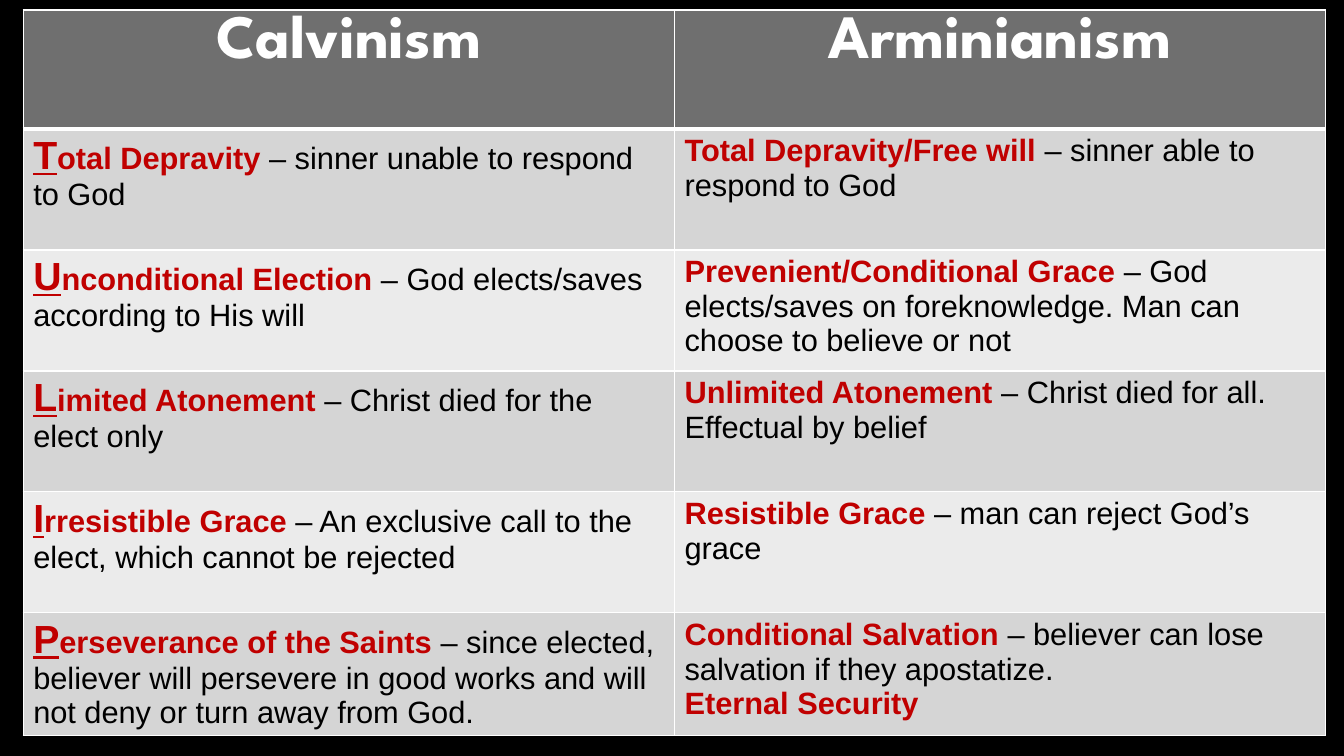
import dataclasses
import typing

import lxml.etree
import pptx
import pptx.dml.color
import pptx.enum.text
import pptx.oxml.ns
import pptx.util

Inches = pptx.util.Inches
COLORS = {
    "back": "000000", "text": "000000", "term": "C00000", "white": "FFFFFF",
    "head": "6F6F6F", "dark": "D5D5D5", "light": "EBEBEB",
}
HEADS = ("Calvinism", "Arminianism")
WIDTH, HEAD_HIGH, ROW_HIGH = 6.46, 1.18, 1.2


@dataclasses.dataclass
class Point:
    """One point of doctrine, as each side holds it."""
    left_term: str
    left_text: str
    right_term: str
    right_text: str
    extra: str = ""


POINTS = [
    Point("Total Depravity", "sinner unable to respond to God",
          "Total Depravity/Free will", "sinner able to respond to God"),
    Point("Unconditional Election", "God elects/saves according to His will",
          "Prevenient/Conditional Grace",
          "God elects/saves on foreknowledge. Man can choose to believe or not"),
    Point("Limited Atonement", "Christ died for the elect only",
          "Unlimited Atonement", "Christ died for all. Effectual by belief"),
    Point("Irresistible Grace",
          "An exclusive call to the elect, which cannot be rejected",
          "Resistible Grace", "man can reject God’s grace"),
    Point("Perseverance of the Saints",
          "since elected, believer will persevere in good works "
          "and will not deny or turn away from God.",
          "Conditional Salvation",
          "believer can lose salvation if they apostatize.",
          "Eternal Security"),
]


def color(name: str) -> pptx.dml.color.RGBColor:
    return pptx.dml.color.RGBColor.from_string(COLORS[name])


def write(para: typing.Any, text: str, *, size: float = 22, face: str = "Arial",
          tint: str = "text", bold: bool = False, under: bool = False) -> None:
    """Add a run of text with its format."""
    run = para.add_run()
    run.text = text
    font = run.font
    font.size, font.name = pptx.util.Pt(size), face
    font.bold, font.underline = bold, under
    font.color.rgb = color(tint)


def dress(cell: typing.Any, fill: str, base: float = 1, top: float = 1) -> None:
    """Give a cell its white borders and its fill."""
    props = cell._tc.get_or_add_tcPr()
    name = pptx.oxml.ns.qn
    for side, wide in (("L", 1), ("R", 1), ("T", top), ("B", base)):
        line = lxml.etree.SubElement(props, name(f"a:ln{side}"),
                                     w=str(pptx.util.Pt(wide)))
        solid = lxml.etree.SubElement(line, name("a:solidFill"))
        lxml.etree.SubElement(solid, name("a:srgbClr"), val=COLORS["white"])
    cell.fill.solid()
    cell.fill.fore_color.rgb = color(fill)


def fill_row(left: typing.Any, right: typing.Any, point: Point) -> None:
    """Write one point into the two cells of its row."""
    para = left.text_frame.paragraphs[0]
    write(para, point.left_term[0], size=28, tint="term", bold=True, under=True)
    write(para, point.left_term[1:] + " ", tint="term", bold=True)
    write(para, "– " + point.left_text)

    para = right.text_frame.paragraphs[0]
    write(para, point.right_term + " ", tint="term", bold=True)
    write(para, "– " + point.right_text)
    if point.extra:
        write(right.text_frame.add_paragraph(), point.extra, tint="term", bold=True)


def main() -> None:
    # Slide with a black ground
    deck = pptx.Presentation()
    deck.slide_width, deck.slide_height = Inches(13.33), Inches(7.5)
    slide = deck.slides.add_slide(deck.slide_layouts[6])
    slide.background.fill.solid()
    slide.background.fill.fore_color.rgb = color("back")

    # Table grid
    count = len(POINTS)
    table = slide.shapes.add_table(
        count + 1, len(HEADS), Inches(0.23), Inches(0.1),
        Inches(WIDTH * len(HEADS)), Inches(HEAD_HIGH + ROW_HIGH * count)).table
    for col in table.columns:
        col.width = Inches(WIDTH)
    for num, row in enumerate(table.rows):
        row.height = Inches(ROW_HIGH if num else HEAD_HIGH)

    # Header row
    for num, head in enumerate(HEADS):
        cell = table.cell(0, num)
        dress(cell, "head", base=3)
        para = cell.text_frame.paragraphs[0]
        para.alignment = pptx.enum.text.PP_ALIGN.CENTER
        write(para, head, size=44, face="League Spartan", tint="white", bold=True)

    # Banded rows of points
    for num, point in enumerate(POINTS, start=1):
        pair = [table.cell(num, col) for col in range(len(HEADS))]
        for cell in pair:
            dress(cell, "dark" if num % 2 else "light", top=3 if num == 1 else 1)
        fill_row(*pair, point)

    deck.save("out.pptx")


if __name__ == "__main__":
    main()
